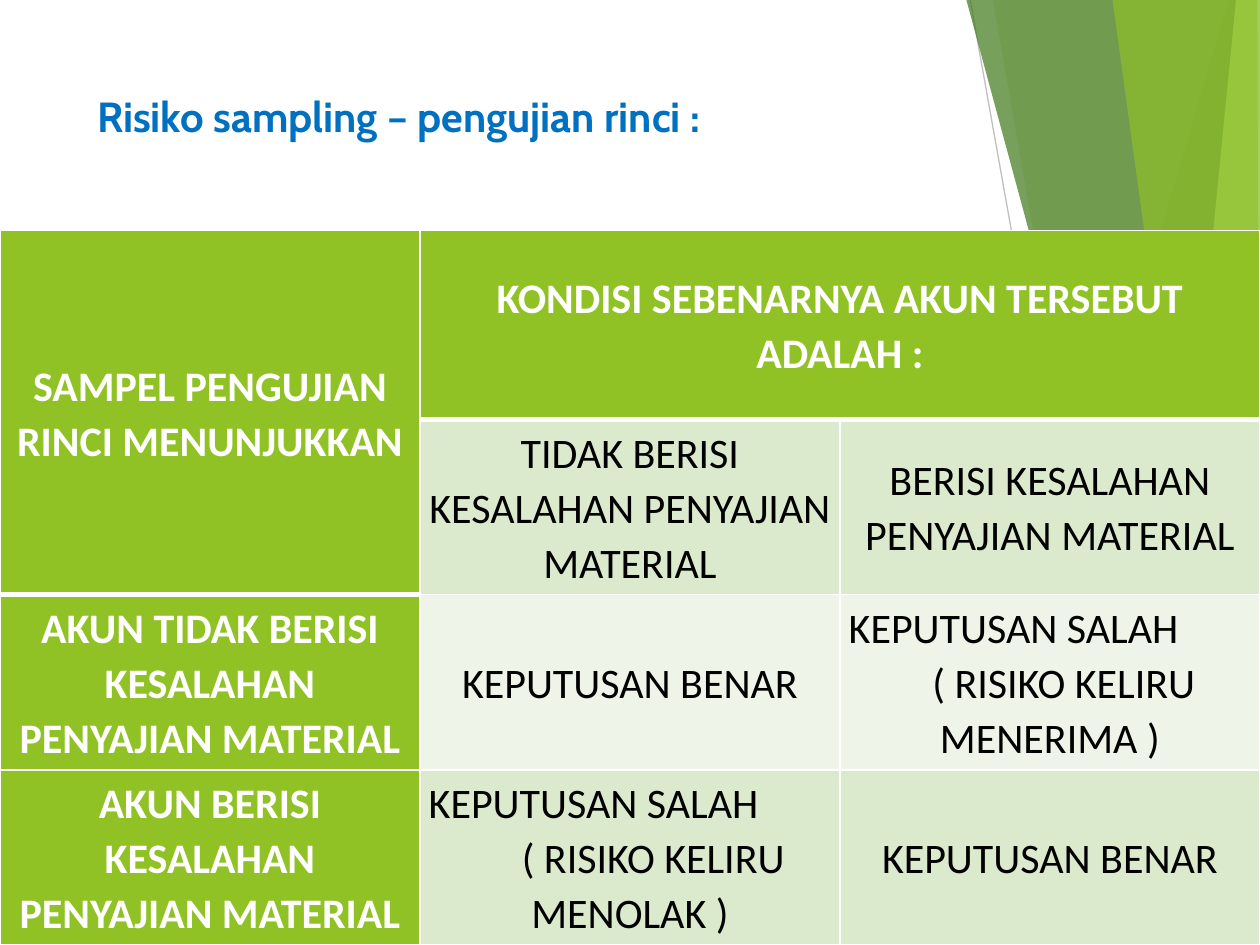
from dataclasses import dataclass

from lxml import etree
from pptx import Presentation
from pptx.dml.color import RGBColor
from pptx.enum.shapes import MSO_CONNECTOR
from pptx.enum.text import MSO_ANCHOR, PP_ALIGN
from pptx.oxml.ns import qn
from pptx.util import Inches, Pt

STRAIGHT = MSO_CONNECTOR.STRAIGHT
TOP, MIDDLE = MSO_ANCHOR.TOP, MSO_ANCHOR.MIDDLE
LEFT, CENTER = PP_ALIGN.LEFT, PP_ALIGN.CENTER


@dataclass(frozen=True)
class Theme:
    title_font: str = "Cabin"
    body_font: str = "Calibri"
    size: int = 24
    title: str = "0070C0"
    green: str = "90C226"
    mid_green: str = "54A021"
    dark_green: str = "3F7819"
    light_green: str = "C0E474"
    band: str = "DBE9CD"
    pale_band: str = "EEF4E8"
    white: str = "FFFFFF"
    black: str = "000000"


THEME = Theme()
WIDTH, HEIGHT = 10, 7.5

# Bands of the background: colour, opacity in percent, corner points
FACETS = [
    (THEME.green, 85, [(0, 4.39), (0.49, 7.5), (0, 7.5)]),
    (THEME.green, 30, [(9.75, 0), (7.54, 7.5), (10, 7.5), (10, 0)]),
    (THEME.green, 20, [(7.88, 0), (9.19, 7.5), (10, 7.5), (10, 0)]),
    (THEME.mid_green, 72, [(7.26, 7.5), (10, 4.29), (10, 7.5)]),
    (THEME.dark_green, 70, [(7.67, 0), (9.7, 7.5), (10, 7.5), (10, 0)]),
    (THEME.light_green, 70, [(9.81, 0), (9.07, 7.5), (10, 7.5), (10, 0)]),
    (THEME.green, 65, [(8.83, 0), (9.86, 7.5), (10, 7.5), (9.98, 0)]),
    (THEME.green, 80, [(8.81, 7.5), (10, 5.35), (10, 7.5)]),
]
RAYS = [("D9D9D9", (5.61, 7.5), (10, 4.57)), ("BFBFBF", (7.7, 0), (9.04, 7.5))]

WRONG = "KEPUTUSAN SALAH"
RIGHT = "KEPUTUSAN BENAR"
ROWS = [
    ["SAMPEL PENGUJIAN RINCI MENUNJUKKAN",
     "KONDISI SEBENARNYA AKUN TERSEBUT ADALAH :", ""],
    ["", "TIDAK BERISI KESALAHAN PENYAJIAN MATERIAL",
     "BERISI KESALAHAN PENYAJIAN MATERIAL"],
    ["AKUN TIDAK BERISI KESALAHAN PENYAJIAN MATERIAL", RIGHT,
     WRONG + "\n( RISIKO KELIRU MENERIMA )"],
    ["AKUN BERISI KESALAHAN PENYAJIAN MATERIAL",
     WRONG + "\n( RISIKO KELIRU MENOLAK )", RIGHT],
]
ROW_HEIGHTS = [1.5, 1.39, 1.39, 1.39]
RISK_INDENTS = {(2, 2): 0.22, (3, 1): 0.37}
HEADER_CELLS = {(0, 0), (0, 1), (0, 2), (1, 0)}


def rgb(value):
    return RGBColor.from_string(value)


def style_font(p, name, color, bold):
    for r in p.runs:
        r.font.name = name
        r.font.size = Pt(THEME.size)
        r.font.bold = bold
        r.font.color.rgb = rgb(color)


def add_facet(shapes, color, opacity, points):
    corners = [(Inches(x), Inches(y)) for x, y in points]
    builder = shapes.build_freeform(*corners[0])
    builder.add_line_segments(corners[1:], close=True)
    sp = builder.convert_to_shape()
    sp.shadow.inherit = False
    sp.line.fill.background()
    sp.fill.solid()
    sp.fill.fore_color.rgb = rgb(color)
    clr = sp.fill._xPr.find(".//" + qn("a:srgbClr"))
    etree.SubElement(clr, qn("a:alpha"), val=str(opacity * 1000))


def add_ray(shapes, color, start, end):
    line = shapes.add_connector(STRAIGHT, *map(Inches, start + end))
    line.line.color.rgb = rgb(color)
    line.line.width = Pt(0.75)
    etree.SubElement(line._element.spPr, qn("a:effectLst"))


def add_background(slide):
    shapes = slide.shapes.add_group_shape().shapes
    add_facet(shapes, *FACETS[0])
    for ray in RAYS:
        add_ray(shapes, *ray)
    for facet in FACETS[1:]:
        add_facet(shapes, *facet)


def set_title(slide, text):
    title = slide.shapes.title
    title.left, title.top, title.width, title.height = map(
        Inches, (0.67, 0.67, 6.94, 0.83))
    tf = title.text_frame
    tf.text = text
    tf.vertical_anchor = TOP
    p = tf.paragraphs[0]
    p.alignment = LEFT
    style_font(p, THEME.title_font, THEME.title, True)


def set_borders(cell, top, bottom):
    tcPr = cell._tc.get_or_add_tcPr()
    for side, width in (("L", 1), ("R", 1), ("T", top), ("B", bottom)):
        ln = etree.SubElement(tcPr, qn("a:ln" + side), w=str(Pt(width)))
        fill = etree.SubElement(ln, qn("a:solidFill"))
        etree.SubElement(fill, qn("a:srgbClr"), val=THEME.white)


def fill_cell(cell, row, col, text):
    is_header = row == 0 or col == 0
    band = THEME.pale_band if row == 2 else THEME.band
    thick_top = (row - 1, col) in HEADER_CELLS and (row, col) not in HEADER_CELLS
    set_borders(cell, 3 if thick_top else 1,
                3 if (row, col) in HEADER_CELLS else 1)
    cell.fill.solid()
    cell.fill.fore_color.rgb = rgb(THEME.green if is_header else band)
    cell.margin_left = cell.margin_right = Inches(0.07)
    cell.margin_top = cell.margin_bottom = 0
    cell.vertical_anchor = MIDDLE
    if not text:
        return
    cell.text_frame.text = text
    for p in cell.text_frame.paragraphs:
        p.alignment = CENTER
        p.line_spacing = 1.07
        style_font(p, THEME.body_font,
                   THEME.white if is_header else THEME.black, is_header)
    if (row, col) in RISK_INDENTS:
        verdict, risk = cell.text_frame.paragraphs
        verdict.alignment = LEFT
        indent = Inches(RISK_INDENTS[row, col])
        risk._p.get_or_add_pPr().set("indent", str(indent))


def add_risk_table(slide):
    top = 1.83
    table = slide.shapes.add_table(
        len(ROWS), len(ROWS[0]), 0, Inches(top),
        Inches(WIDTH), Inches(HEIGHT - top)).table
    for column in table.columns:
        column.width = Inches(WIDTH / len(ROWS[0]))
    for row, height in zip(table.rows, ROW_HEIGHTS):
        row.height = Inches(height)
    table.cell(0, 0).merge(table.cell(1, 0))
    table.cell(0, 1).merge(table.cell(0, 2))
    for r, texts in enumerate(ROWS):
        for c, text in enumerate(texts):
            fill_cell(table.cell(r, c), r, c, text)


def main():
    prs = Presentation()
    prs.slide_width, prs.slide_height = Inches(WIDTH), Inches(HEIGHT)
    slide = prs.slides.add_slide(prs.slide_layouts[5])
    add_background(slide)
    set_title(slide, "Risiko sampling – pengujian rinci :")
    add_risk_table(slide)
    prs.save("out.pptx")


if __name__ == "__main__":
    main()
